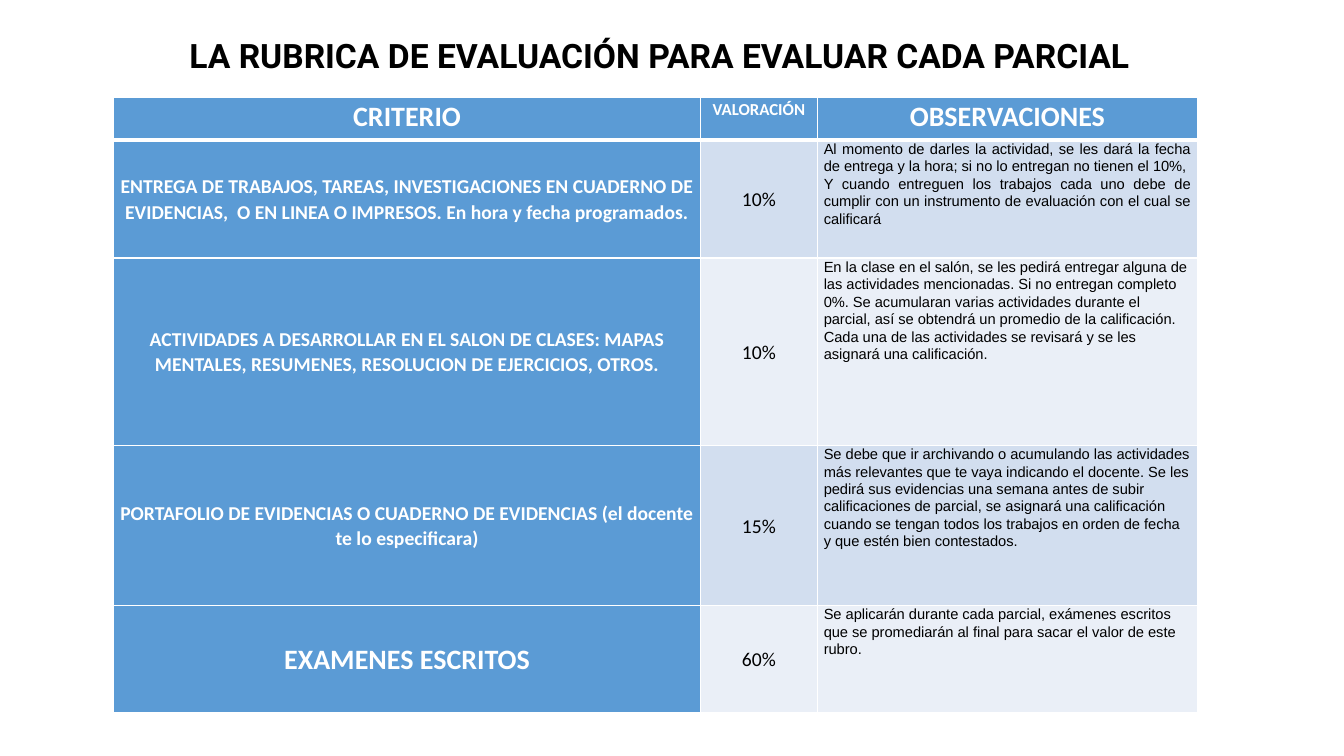
import pptx
import pptx.util
import pptx.dml.color
import pptx.enum.text
import pptx.oxml
import pptx.oxml.ns

Cm = pptx.util.Cm
Pt = pptx.util.Pt
RGBColor = pptx.dml.color.RGBColor
PP_ALIGN = pptx.enum.text.PP_ALIGN
MSO_ANCHOR = pptx.enum.text.MSO_ANCHOR

WHITE = RGBColor(0xFF, 0xFF, 0xFF)
BLACK = RGBColor(0x00, 0x00, 0x00)
BLUE = RGBColor(0x5B, 0x9B, 0xD5)
BAND_DARK = RGBColor(0xD2, 0xDE, 0xEF)
BAND_LIGHT = RGBColor(0xEA, 0xEF, 0xF7)

COL_WIDTHS = [14.78, 2.95, 9.58]
ROW_HEIGHTS = [1.07, 2.97, 4.72, 4.04, 2.69]
HEADERS = [("CRITERIO", 20), ("VALORACIÓN", 12), ("OBSERVACIONES", 20)]
CRITERIA = [
    ("ENTREGA DE TRABAJOS, TAREAS, INVESTIGACIONES EN CUADERNO DE EVIDENCIAS,  O EN LINEA O IMPRESOS. "
     "En hora y fecha programados.", 14, "10%", PP_ALIGN.JUSTIFY,
     ["Al momento de darles la actividad, se les dará la fecha de entrega y la hora; "
      "si no lo entregan no tienen el 10%,",
      "Y cuando entreguen los trabajos cada uno debe de cumplir con un instrumento de evaluación "
      "con el cual se calificará"]),
    ("ACTIVIDADES A DESARROLLAR EN EL SALON DE CLASES: MAPAS MENTALES, RESUMENES, "
     "RESOLUCION DE EJERCICIOS, OTROS.", 14, "10%", PP_ALIGN.LEFT,
     ["En la clase en el salón, se les pedirá entregar alguna de las actividades mencionadas. "
      "Si no entregan completo 0%. Se acumularan varias actividades durante el parcial, "
      "así se obtendrá un promedio de la calificación. Cada una de las actividades se revisará "
      "y se les asignará una calificación."]),
    ("PORTAFOLIO DE EVIDENCIAS O CUADERNO DE EVIDENCIAS (el docente te lo especificara)",
     14, "15%", PP_ALIGN.LEFT,
     ["Se debe que ir archivando o acumulando las actividades más relevantes que te vaya indicando "
      "el docente. Se les pedirá sus evidencias una semana antes de subir calificaciones de parcial, "
      "se asignará una calificación cuando se tengan todos los trabajos en orden de fecha "
      "y que estén bien contestados."]),
    ("EXAMENES ESCRITOS", 20, "60%", PP_ALIGN.LEFT,
     ["Se aplicarán durante cada parcial, exámenes escritos que se promediarán al final "
      "para sacar el valor de este rubro."]),
]


def add_run(p, text, font, size, color, bold):
    r = p.add_run()
    r.text = text
    r.font.name = font
    r.font.size = Pt(size)
    r.font.color.rgb = color
    r.font.bold = bold


def fill_cell(cell, paragraphs, font, size, color, bold, align, anchor, fill, bottom=1):
    cell.margin_left = cell.margin_right = Cm(0.16)
    cell.margin_top = cell.margin_bottom = 0
    cell.vertical_anchor = anchor
    tcPr = cell._tc.get_or_add_tcPr()
    for side, width in (("L", 1), ("R", 1), ("T", 1), ("B", bottom)):
        tcPr.append(pptx.oxml.parse_xml(
            f'<a:ln{side} {pptx.oxml.ns.nsdecls("a")} w="{Pt(width)}">'
            f'<a:solidFill><a:srgbClr val="{WHITE}"/></a:solidFill></a:ln{side}>'))
    cell.fill.solid()
    cell.fill.fore_color.rgb = fill
    tf = cell.text_frame
    for i, text in enumerate(paragraphs):
        p = tf.add_paragraph() if i else tf.paragraphs[0]
        p.alignment = align
        p.line_spacing = 1.07
        add_run(p, text, font, size, color, bold)


prs = pptx.Presentation()
prs.slide_width = Cm(33.87)
prs.slide_height = Cm(19.05)
s = prs.slides.add_slide(prs.slide_layouts[5])

table = s.shapes.add_table(len(ROW_HEIGHTS), len(COL_WIDTHS), Cm(2.87), Cm(2.46),
                           Cm(sum(COL_WIDTHS)), Cm(sum(ROW_HEIGHTS))).table
for col, width in zip(table.columns, COL_WIDTHS):
    col.width = Cm(width)
for row, height in zip(table.rows, ROW_HEIGHTS):
    row.height = Cm(height)

for c, (header, size) in enumerate(HEADERS):
    fill_cell(table.cell(0, c), [header], "Calibri", size, WHITE, True,
              PP_ALIGN.CENTER, MSO_ANCHOR.TOP, BLUE, bottom=3)

for n, (criterion, size, value, align, notes) in enumerate(CRITERIA, start=1):
    band = BAND_DARK if n % 2 else BAND_LIGHT
    fill_cell(table.cell(n, 0), [criterion], "Calibri", size, WHITE, True,
              PP_ALIGN.CENTER, MSO_ANCHOR.MIDDLE, BLUE, bottom=1)
    fill_cell(table.cell(n, 1), [value], "Calibri", 14, BLACK, False,
              PP_ALIGN.CENTER, MSO_ANCHOR.MIDDLE, band)
    fill_cell(table.cell(n, 2), notes, "Arial", 10.5, BLACK, False,
              align, MSO_ANCHOR.TOP, band)

sp = s.shapes.title
sp.left, sp.top, sp.width, sp.height = Cm(3.61), Cm(0.76), Cm(26.01), Cm(1.27)
tf = sp.text_frame
tf.word_wrap = True
tf.auto_size = pptx.enum.text.MSO_AUTO_SIZE.NONE
tf.vertical_anchor = MSO_ANCHOR.TOP
p = tf.paragraphs[0]
p.alignment = PP_ALIGN.CENTER
add_run(p, "LA RUBRICA DE EVALUACIÓN PARA EVALUAR CADA PARCIAL", "Roboto", 24, BLACK, True)

prs.save("out.pptx")
